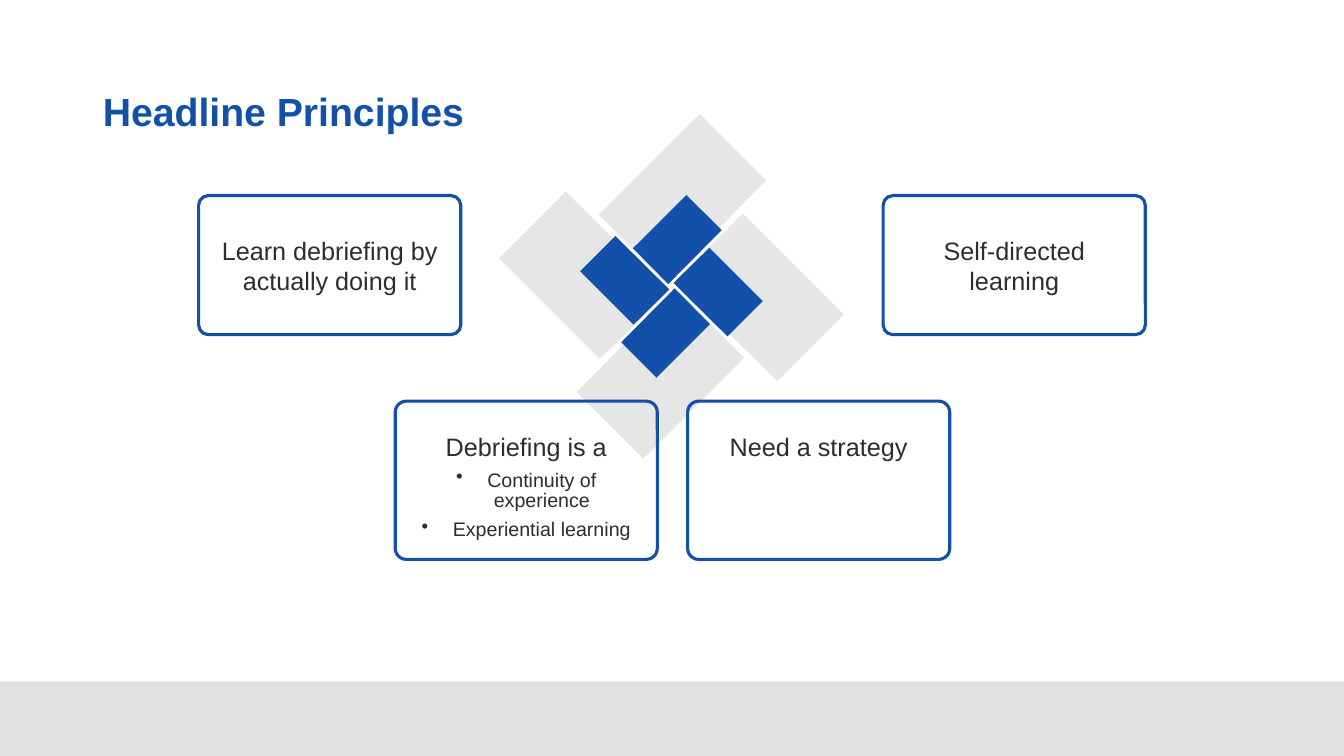
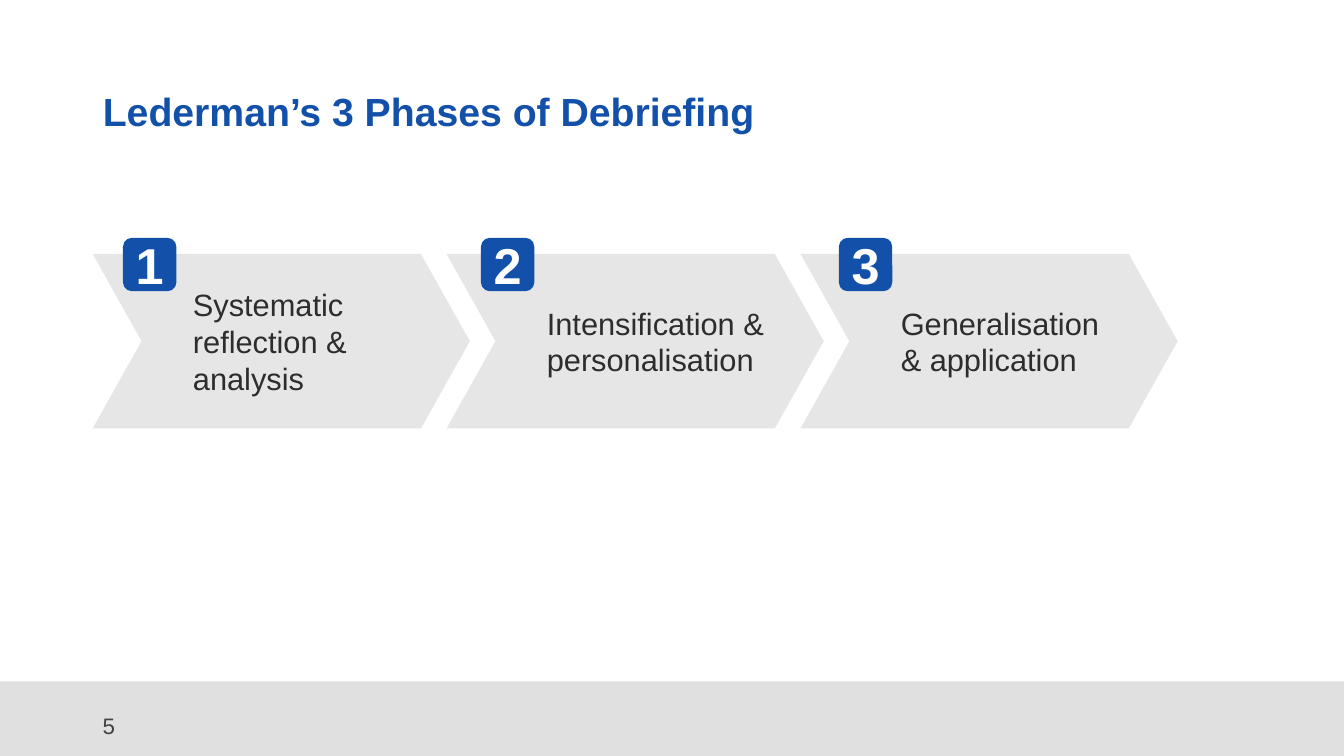
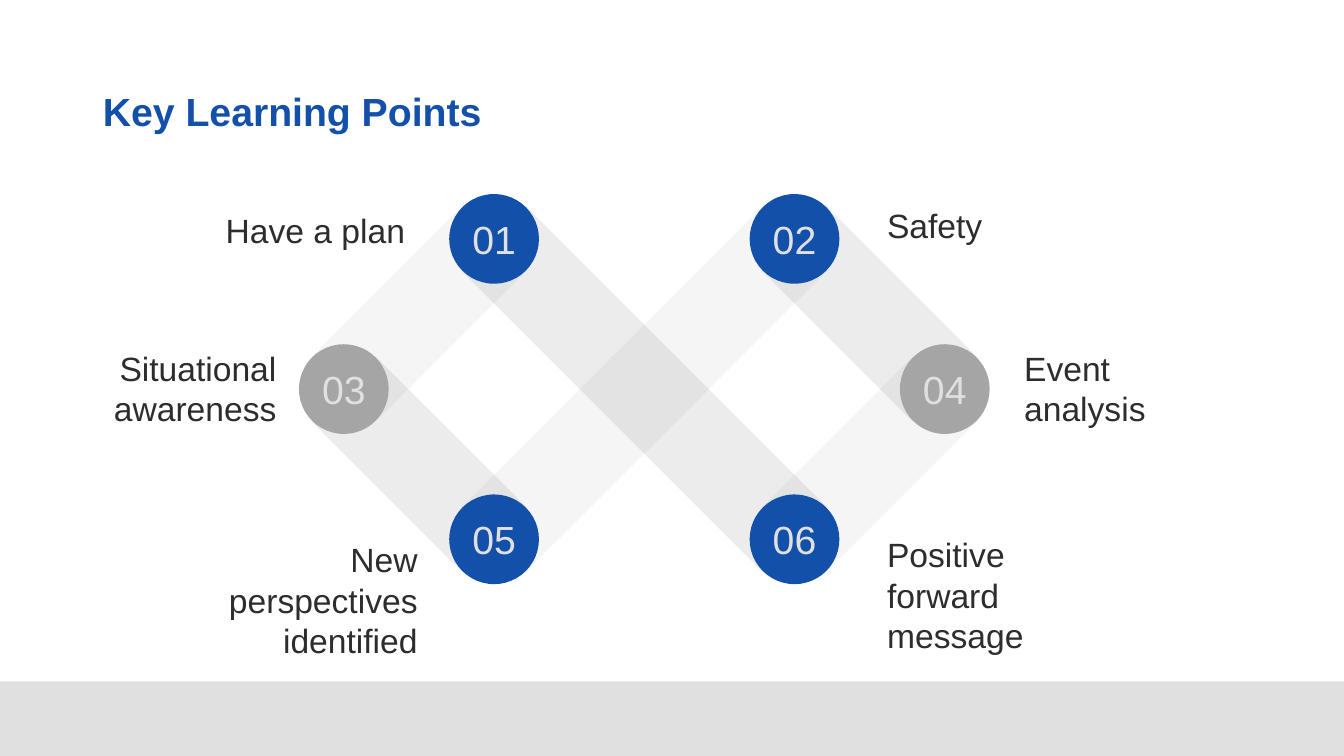
from lxml import etree
from pptx import Presentation
from pptx.dml.color import RGBColor
from pptx.enum.shapes import MSO_SHAPE
from pptx.enum.text import MSO_ANCHOR, PP_ALIGN
from pptx.oxml.ns import qn
from pptx.util import Inches, Pt

RECT, ROUNDED = MSO_SHAPE.RECTANGLE, MSO_SHAPE.ROUNDED_RECTANGLE
CHEVRON, OVAL = MSO_SHAPE.CHEVRON, MSO_SHAPE.OVAL
LEFT, CENTER, RIGHT = PP_ALIGN.LEFT, PP_ALIGN.CENTER, PP_ALIGN.RIGHT
TOP, MIDDLE = MSO_ANCHOR.TOP, MSO_ANCHOR.MIDDLE

COLORS = {
    "blue": "1250A9", "text": "2D2D2D", "number": "424242", "white": "FFFFFF",
    "band": "E0E0E0", "pale": "E7E6E6", "gray": "A5A5A5",
    "rising": "BFBFBF", "falling": "808080",
}
FONT = "Arial"
INSETS = (0.1, 0.05, 0.1, 0.05)


def rgb(name):
    return RGBColor.from_string(COLORS[name])


class Deck:
    """Holds the style and the current slide."""

    def __init__(self):
        self.prs = Presentation()
        self.prs.slide_width = Inches(13.33)
        self.prs.slide_height = Inches(7.5)
        self.s = None

    def slide(self, title):
        """Start a slide with its title and bottom band."""
        self.s = self.prs.slides.add_slide(self.prs.slide_layouts[5])
        self.shape(RECT, (0, 6.76, 13.33, 0.74), fill="band")
        sp = self.s.shapes.title
        sp.left, sp.top = Inches(0.92), Inches(0.4)
        sp.width, sp.height = Inches(11.5), Inches(1.45)
        self.set_text(sp, [title], 28, "blue", bold=True)
        sp.text_frame.paragraphs[0].line_spacing = 0.9

    def style(self, p, size, color, bold=False):
        for r in p.runs:
            r.font.name, r.font.size, r.font.bold = FONT, Pt(size), bold
            r.font.color.rgb = rgb(color)

    def set_text(self, sp, lines, size, color="text", align=LEFT, anchor=MIDDLE,
                 insets=INSETS, bold=False):
        tf = sp.text_frame
        tf.text = "\n".join(lines)
        tf.word_wrap, tf.vertical_anchor = True, anchor
        (tf.margin_left, tf.margin_top,
         tf.margin_right, tf.margin_bottom) = [Inches(v) for v in insets]
        for p in tf.paragraphs:
            p.alignment = align
            self.style(p, size, color, bold)

    def paint(self, sp, fill=None, line=None, alpha=None):
        sp.shadow.inherit = False
        if fill:
            sp.fill.solid()
            sp.fill.fore_color.rgb = rgb(fill)
        else:
            sp.fill.background()
        if line:
            sp.line.color.rgb = rgb(line)
            sp.line.width = Pt(2.25)
        else:
            sp.line.fill.background()
        if alpha:
            clr = sp._element.spPr.find(qn("a:solidFill")).find(qn("a:srgbClr"))
            etree.SubElement(clr, qn("a:alpha")).set("val", str(alpha * 1000))

    def shape(self, kind, box, fill=None, line=None, adj=None):
        sp = self.s.shapes.add_shape(kind, *[Inches(v) for v in box])
        self.paint(sp, fill, line)
        if adj:
            sp.adjustments[0] = adj
        return sp

    def polygons(self, outlines, fill, alpha=None):
        """Draw closed outlines as one freeform."""
        fb = None
        for outline in outlines:
            pts = [(Inches(x), Inches(y)) for x, y in outline]
            if fb is None:
                fb = self.s.shapes.build_freeform(*pts[0], scale=1.0)
            else:
                fb.move_to(*pts[0])
            fb.add_line_segments(pts[1:], close=True)
        self.paint(fb.convert_to_shape(), fill, alpha=alpha)

    def pinwheel(self, scale, fill):
        """Turn one blade four times about the centre."""
        cx, cy = 6.66, 2.84
        blade = [(-0.06, -0.04), (-0.72, -0.71), (0.28, -1.71), (0.94, -1.05)]
        outlines = []
        for _ in range(4):
            outlines.append([(cx + x * scale, cy + y * scale) for x, y in blade])
            blade = [(-y, x) for x, y in blade]
        self.polygons(outlines, fill)

    def card(self, box, text, bullets=(), anchor=TOP):
        sp = self.shape(ROUNDED, box, line="blue", adj=0.07)
        top = 0.31 if anchor == TOP else 0.05
        self.set_text(sp, [text, *bullets], 18, align=CENTER, anchor=anchor,
                      insets=(0.1, top, 0.1, 0.05))
        first, *rest = sp.text_frame.paragraphs
        if anchor == TOP:
            first.line_spacing = 0.85
        for p in rest:
            p.line_spacing, p.space_before = 0.85, Pt(7)
            self.bullet(p)
            self.style(p, 14, "text")

    def bullet(self, p):
        pPr = p._p.get_or_add_pPr()
        pPr.set("marL", str(Inches(0.31)))
        pPr.set("indent", str(-Inches(0.31)))
        etree.SubElement(pPr, qn("a:buChar")).set("char", "•")

    def label(self, box, text, size, color="text", align=LEFT, anchor=TOP):
        sp = self.s.shapes.add_textbox(*[Inches(v) for v in box])
        self.set_text(sp, [text], size, color, align, anchor)


def principles(deck):
    deck.slide("Headline Principles")
    deck.pinwheel(1, "pale")
    # Lower cards
    deck.card((3.92, 3.98, 2.6, 1.57), "Debriefing is a",
              ["Continuity of experience", "Experiential learning"])
    deck.card((6.82, 3.98, 2.6, 1.57), "Need a strategy")
    # Upper cards
    deck.card((1.97, 1.94, 2.6, 1.38), "Learn debriefing by actually doing it",
              anchor=MIDDLE)
    deck.card((8.76, 1.94, 2.6, 1.38), "Self-directed learning", anchor=MIDDLE)
    deck.pinwheel(0.53, "blue")


def phases(deck):
    deck.slide("Lederman’s 3 Phases of Debriefing")
    deck.label((0.92, 7, 3, 0.4), "5", 16, "number", anchor=MIDDLE)
    names = ["Systematic reflection & analysis", "Intensification & personalisation",
             "Generalisation & application"]
    # Chevrons, then the number badges over them
    for i, name in enumerate(names):
        sp = deck.shape(CHEVRON, (0.92 + 3.51 * i, 2.52, 3.74, 1.73), "pale", adj=0.28)
        deck.set_text(sp, [name], 22, insets=(0.51, 0.05, 0.08, 0.05))
    for i in range(len(names)):
        sp = deck.shape(ROUNDED, (1.22 + 3.55 * i, 2.36, 0.53, 0.53), "blue")
        deck.set_text(sp, [str(i + 1)], 36, "white", CENTER, insets=(0, 0, 0, 0),
                      bold=True)


def learning_points(deck):
    deck.slide("Key Learning Points")
    step, half, size = 1.49, 0.32, 0.89

    def node(col, row):
        return 3.41 + step * col, 2.37 + step * row

    # Ribbons run down from a node to the next row, right (1) or left (-1)
    ribbons = [("rising", -1, [(1, 0), (3, 0), (2, 1), (4, 1)]),
               ("falling", 1, [(1, 0), (3, 0), (0, 1), (2, 1)])]
    for color, side, starts in ribbons:
        for col, row in starts:
            (x1, y1), (x2, y2) = node(col, row), node(col + side, row + 1)
            dx = half * side
            deck.polygons([[(x1 + dx, y1 - half), (x2 + dx, y2 - half),
                            (x2 - dx, y2 + half), (x1 - dx, y1 + half)]], color, alpha=15)

    # Numbered circles
    circles = [(1, 0), (3, 0), (0, 1), (4, 1), (1, 2), (3, 2)]
    for i, (col, row) in enumerate(circles, 1):
        x, y = node(col, row)
        sp = deck.shape(OVAL, (x - size / 2, y - size / 2, size, size),
                        "gray" if row == 1 else "blue")
        deck.set_text(sp, [f"{i:02}"], 28, "band", CENTER, insets=(0, 0, 0, 0))

    # Labels
    for text, left, top, height, align in [
        ("Have a plan", 2.14, 2.03, 0.5, LEFT),
        ("Safety", 8.7, 1.98, 0.5, LEFT),
        ("Situational awareness", 0.74, 3.4, 0.91, RIGHT),
        ("Event analysis", 10.06, 3.4, 0.91, LEFT),
        ("New perspectives identified", 2.14, 5.3, 1.31, RIGHT),
        ("Positive forward message", 8.7, 5.25, 1.31, LEFT),
    ]:
        deck.label((left, top, 2.1, height), text, 24, align=align)


def main():
    deck = Deck()
    principles(deck)
    phases(deck)
    learning_points(deck)
    deck.prs.save("out.pptx")


if __name__ == "__main__":
    main()
